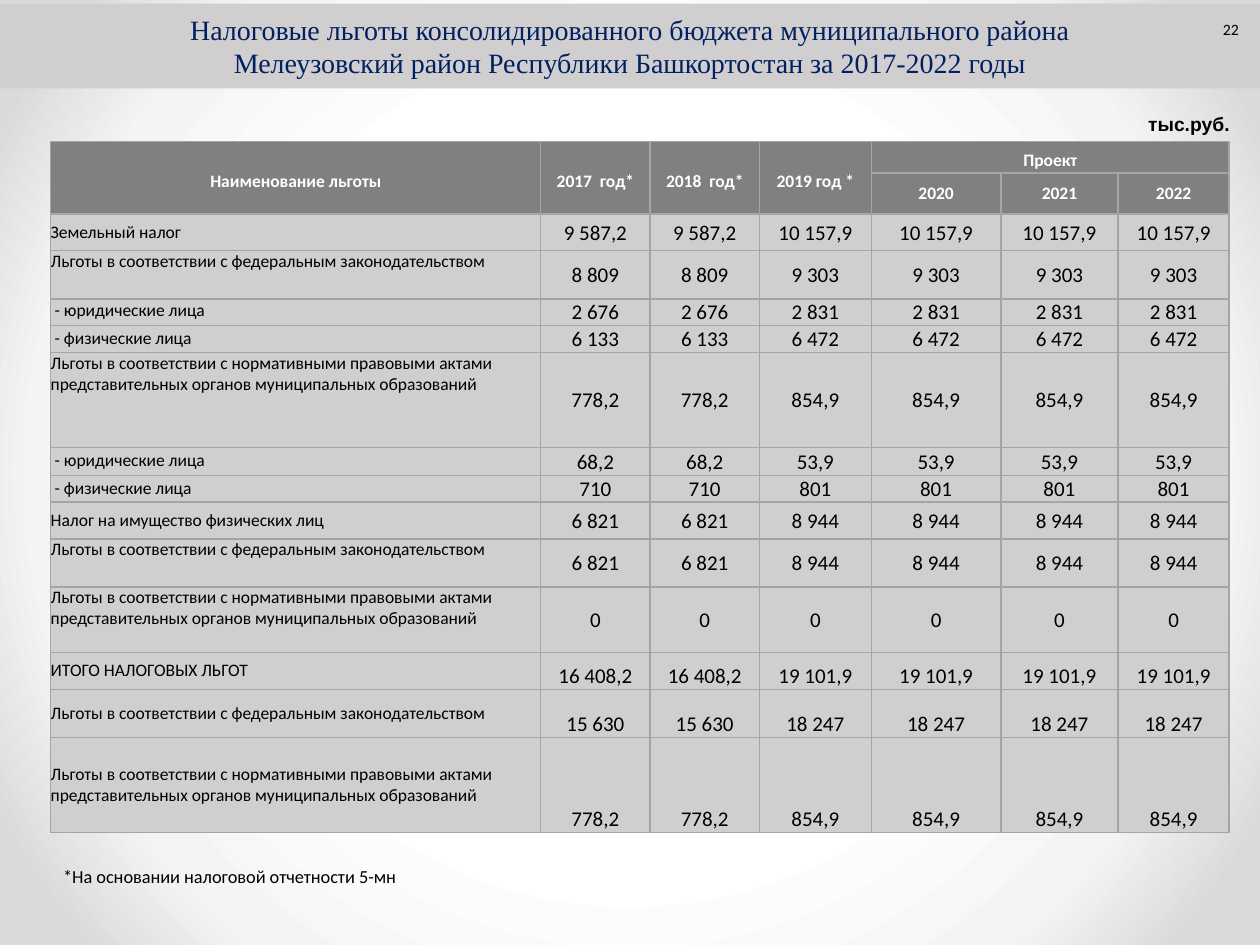
from dataclasses import dataclass

from pptx import Presentation
from pptx.dml.color import RGBColor
from pptx.enum.text import MSO_ANCHOR, MSO_AUTO_SIZE, PP_ALIGN
from pptx.oxml import parse_xml
from pptx.oxml.ns import nsdecls, qn
from pptx.util import Pt

LEFT, CENTER, RIGHT = PP_ALIGN.LEFT, PP_ALIGN.CENTER, PP_ALIGN.RIGHT
TOP, MIDDLE, BOTTOM = MSO_ANCHOR.TOP, MSO_ANCHOR.MIDDLE, MSO_ANCHOR.BOTTOM
NO_AUTOFIT = MSO_AUTO_SIZE.NONE

COLORS = {
    "title": "002060", "panel": "D0CECE", "header": "808080", "border": "A5A5A5",
    "text": "000000", "header_text": "FFFFFF",
    "glow": "FFFFFF", "glow_mid": "F4F4F4", "glow_edge": "DADADA",
}
GLOW_STOPS = ((50, "glow"), (76, "glow_mid"), (92, "glow_edge"))

FEDERAL = "Льготы в соответствии с федеральным законодательством"
MUNICIPAL = ("Льготы в соответствии с нормативными правовыми актами "
             "представительных органов муниципальных образований")
COMPANIES = " - юридические лица"
PEOPLE = " - физические лица"

COLUMN_WIDTHS = (280, 62.5, 62.5, 64, 74, 67, 63.5)
HEADER_HEIGHTS = (18, 23.5)
HEADER_LINE = 16.4
REPORT_YEARS = ("2017  год*", "2018  год*", "2019 год *")
PROJECT_YEARS = ("2020", "2021", "2022")


@dataclass(frozen=True)
class Benefit:
    """A table row: one amount for 2017-2018, another for 2019-2022."""
    name: str
    early: str
    late: str
    height: float
    name_anchor: MSO_ANCHOR = TOP
    amount_anchor: MSO_ANCHOR = MIDDLE
    line: float | None = None


BENEFITS = (
    Benefit("Земельный налог", "9 587,2", "10 157,9", 21, MIDDLE),
    Benefit(FEDERAL, "8 809", "9 303", 27.5),
    Benefit(COMPANIES, "2 676", "2 831", 15, line=12.6),
    Benefit(PEOPLE, "6 133", "6 472", 15, line=13.4),
    Benefit(MUNICIPAL, "778,2", "854,9", 54.25),
    Benefit(COMPANIES, "68,2", "53,9", 16, line=13.8),
    Benefit(PEOPLE, "710", "801", 15, line=13.4),
    Benefit("Налог на имущество физических лиц", "6 821", "8 944", 21, MIDDLE),
    Benefit(FEDERAL, "6 821", "8 944", 27.5),
    Benefit(MUNICIPAL, "0", "0", 37.5),
    Benefit("ИТОГО НАЛОГОВЫХ ЛЬГОТ", "16 408,2", "19 101,9", 21, MIDDLE, BOTTOM),
    Benefit(FEDERAL, "15 630", "18 247", 27.5, MIDDLE, BOTTOM),
    Benefit(MUNICIPAL, "778,2", "854,9", 54.25, MIDDLE, BOTTOM),
)


def rgb(name: str) -> RGBColor:
    return RGBColor.from_string(COLORS[name])


def write_text(frame, text: str, *, size: float = 10, font: str = "Calibri",
               color: str = "text", bold: bool = False, align=LEFT,
               line: float | None = None) -> None:
    """Fill a text frame, one paragraph for each line of text."""
    for index, words in enumerate(text.split("\n")):
        paragraph = frame.paragraphs[0] if index == 0 else frame.add_paragraph()
        paragraph.alignment = align
        paragraph.space_before = Pt(0)
        if line:
            paragraph.line_spacing = Pt(line)
        run = paragraph.add_run()
        run.text = words
        run.font.size, run.font.name, run.font.bold = Pt(size), font, bold
        run.font.color.rgb = rgb(color)


def add_label(slide, text: str, left: float, top: float, width: float,
              height: float, *, anchor=TOP, **text_format) -> None:
    frame = slide.shapes.add_textbox(Pt(left), Pt(top), Pt(width), Pt(height)).text_frame
    frame.word_wrap = True
    frame.vertical_anchor = anchor
    write_text(frame, text, **text_format)


def paint_background(slide) -> None:
    """Lay a circular gradient that darkens towards the slide edges."""
    slide.background.fill.solid()
    stops = "".join(
        f'<a:gs pos="{percent * 1000}"><a:srgbClr val="{COLORS[name]}"/></a:gs>'
        for percent, name in GLOW_STOPS)
    gradient = parse_xml(
        f'<a:gradFill {nsdecls("a")} rotWithShape="1"><a:gsLst>{stops}</a:gsLst>'
        '<a:path path="circle"><a:fillToRect l="50000" t="50000" r="50000" b="50000"/>'
        '</a:path></a:gradFill>')
    properties = next(slide.element.iter(qn("p:bgPr")))
    properties.replace(properties[0], gradient)


def add_title(slide, text: str) -> None:
    title = slide.shapes.title
    title.left, title.top, title.width, title.height = Pt(0), Pt(2), Pt(720), Pt(48.5)
    title.fill.solid()
    title.fill.fore_color.rgb = rgb("panel")
    title.text_frame.auto_size = NO_AUTOFIT
    title.text_frame.vertical_anchor = MIDDLE
    write_text(title.text_frame, text, size=16, font="Times New Roman",
               color="title", align=CENTER)


def fill_cell(cell, text: str, *, fill: str = "panel", anchor=MIDDLE,
              margin: float = 0, **text_format) -> None:
    cell.margin_left = cell.margin_right = cell.margin_top = Pt(margin)
    cell.margin_bottom = Pt(0)
    cell.vertical_anchor = anchor
    write_text(cell.text_frame, text, **text_format)
    properties = cell._tc.get_or_add_tcPr()
    for side in ("lnL", "lnR", "lnT", "lnB"):
        properties.append(parse_xml(
            f'<a:{side} {nsdecls("a")} w="{Pt(1)}"><a:solidFill>'
            f'<a:srgbClr val="{COLORS["border"]}"/></a:solidFill></a:{side}>'))
    cell.fill.solid()
    cell.fill.fore_color.rgb = rgb(fill)


def fill_header(table) -> None:
    top_row = ("Наименование льготы", *REPORT_YEARS, "Проект", "", "")
    bottom_row = ("",) * 4 + PROJECT_YEARS
    for row, (captions, line) in enumerate(((top_row, HEADER_LINE), (bottom_row, None))):
        for column, caption in enumerate(captions):
            fill_cell(table.cell(row, column), caption, fill="header", bold=True,
                      color="header_text", align=CENTER, line=line)
    for column in range(4):
        table.cell(0, column).merge(table.cell(1, column))
    table.cell(0, 4).merge(table.cell(0, 6))


def add_benefit_table(slide) -> None:
    heights = HEADER_HEIGHTS + tuple(benefit.height for benefit in BENEFITS)
    table = slide.shapes.add_table(
        len(heights), len(COLUMN_WIDTHS), Pt(29), Pt(80.75),
        Pt(sum(COLUMN_WIDTHS)), Pt(sum(heights))).table
    for column, width in zip(table.columns, COLUMN_WIDTHS):
        column.width = Pt(width)
    for row, height in zip(table.rows, heights):
        row.height = Pt(height)
    fill_header(table)
    for row, benefit in enumerate(BENEFITS, start=len(HEADER_HEIGHTS)):
        fill_cell(table.cell(row, 0), benefit.name, anchor=benefit.name_anchor,
                  line=benefit.line)
        amounts = [benefit.early] * 2 + [benefit.late] * 4
        for column, amount in enumerate(amounts, start=1):
            fill_cell(table.cell(row, column), amount, anchor=benefit.amount_anchor,
                      margin=0.7, size=12, align=CENTER)


def main() -> None:
    deck = Presentation()
    deck.slide_width, deck.slide_height = Pt(720), Pt(540)
    slide = deck.slides.add_slide(deck.slide_layouts[5])
    paint_background(slide)
    add_title(slide, "Налоговые льготы консолидированного бюджета муниципального района\n"
                     "Мелеузовский район Республики Башкортостан за 2017-2022 годы")
    add_benefit_table(slide)
    add_label(slide, "тыс.руб.", 649, 60.5, 62, 20, size=11, font="Arial", bold=True)
    add_label(slide, "22", 547, 2, 168, 29, anchor=MIDDLE, size=9, align=RIGHT)
    add_label(slide, "*На основании налоговой отчетности 5-мн", 29, 491, 365, 21, size=10.5)
    deck.save("out.pptx")


if __name__ == "__main__":
    main()
